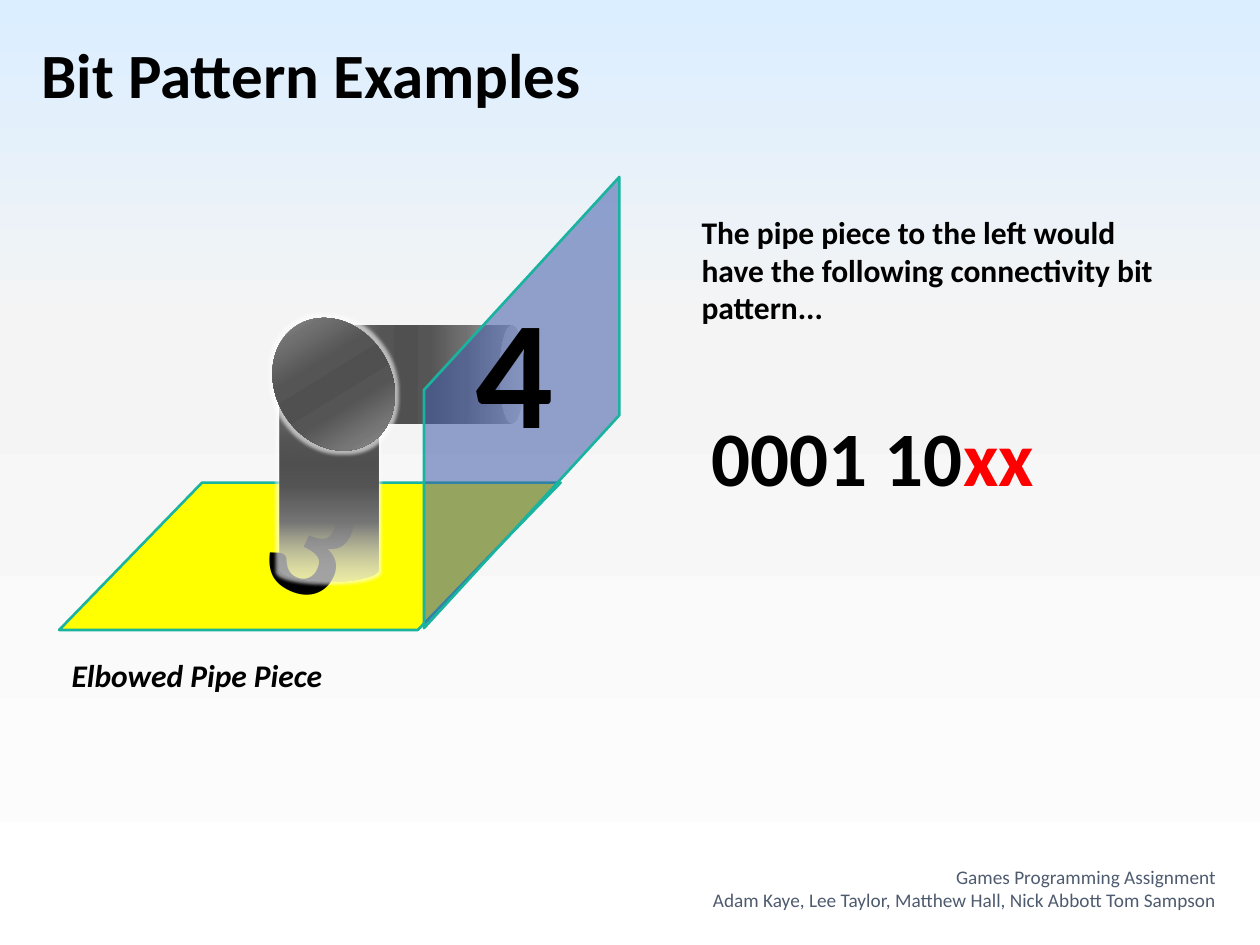
from lxml import etree
from pptx import Presentation
from pptx.dml.color import RGBColor
from pptx.enum.shapes import MSO_SHAPE
from pptx.enum.text import MSO_ANCHOR, MSO_AUTO_SIZE, PP_ALIGN
from pptx.oxml.ns import qn
from pptx.util import Pt

CAN, OVAL, SLANT = MSO_SHAPE.CAN, MSO_SHAPE.OVAL, MSO_SHAPE.PARALLELOGRAM
BOTTOM, RIGHT = MSO_ANCHOR.BOTTOM, PP_ALIGN.RIGHT
GROW = MSO_AUTO_SIZE.SHAPE_TO_FIT_TEXT
FONT = "Calibri"
COLORS = {"ink": "000000", "unused": "FF0000", "footer": "4E5B6F", "floor": "FFFF00",
          "wall": "435EAA", "edge": "1AB39F", "glow": "FFFFFF"}
SKY = [(0, "FFFFFF", 100), (65, "F4F4F4", 100), (100, "DBEEFF", 100)]
METAL = [(0, "C0C0C0", 100), (25, "707070", 100), (40, "555555", 100), (50, "505050", 100),
         (60, "555555", 100), (75, "767676", 100), (100, "C0C0C0", 100)]
FADING_METAL = METAL[:-1] + [(100, "C0C0C0", 28)]


def rgb(name):
    """Return the named colour."""
    return RGBColor.from_string(COLORS[name])


def add_color(parent, color, opacity):
    """Append a colour with an opacity in percent to an XML parent."""
    node = etree.SubElement(parent, qn("a:srgbClr"), val=color)
    if opacity < 100:
        etree.SubElement(node, qn("a:alpha"), val=str(opacity * 1000))


def fill_gradient(owner, fill, stops, angle):
    """Give the fill of a slide or shape a linear gradient, angle counter-clockwise."""
    fill.gradient()
    fill.gradient_angle = angle
    stop_list = next(owner.element.iter(qn("a:gsLst")))
    for stop in list(stop_list):
        stop_list.remove(stop)
    for position, color, opacity in stops:
        stop = etree.SubElement(stop_list, qn("a:gs"), pos=str(position * 1000))
        add_color(stop, color, opacity)


def add_text(slide, box, lines, size, color="ink", bold=True, italic=False):
    """Add a text box with one paragraph per line and return it."""
    label = slide.shapes.add_textbox(*map(Pt, box))
    frame = label.text_frame
    frame.word_wrap = True
    frame.auto_size = GROW
    frame.text = "\n".join(lines)
    for paragraph in frame.paragraphs:
        font = paragraph.font
        font.name, font.size, font.bold, font.italic = FONT, Pt(size), bold, italic
        font.color.rgb = rgb(color)
    return label


def add_plane(slide, box, slant, color, opacity=100):
    """Add an outlined parallelogram and return it."""
    plane = slide.shapes.add_shape(SLANT, *map(Pt, box))
    plane.shadow.inherit = False
    plane.adjustments[0] = slant
    plane.fill.solid()
    plane.fill.fore_color.rgb = rgb(color)
    if opacity < 100:
        tint = next(plane.element.spPr.iter(qn("a:srgbClr")))
        etree.SubElement(tint, qn("a:alpha"), val=str(opacity * 1000))
    plane.line.color.rgb = rgb("edge")
    plane.line.width = Pt(1.5)
    return plane


def add_pipe(slide, kind, box, rotation, stops, glow=0):
    """Add a metal pipe part with an optional glow radius."""
    pipe = slide.shapes.add_shape(kind, *map(Pt, box))
    pipe.shadow.inherit = False
    pipe.rotation = rotation
    fill_gradient(pipe, pipe.fill, stops, 270)
    pipe.line.fill.background()
    if glow:
        effects = pipe.element.spPr.find(qn("a:effectLst"))
        halo = etree.SubElement(effects, qn("a:glow"), rad=str(Pt(glow)))
        add_color(halo, COLORS["glow"], 60)


def add_elbow_diagram(slide, left, top):
    """Draw the elbowed pipe between its floor and wall planes with a caption."""
    def at(x, y, width, height):
        return left + x, top + y, width, height

    add_plane(slide, at(0, 175.8, 286.6, 84.2), 0.97, "floor")
    add_text(slide, at(116, 154.2, 84.2, 113.8), ["3"], 88).rotation = 24.9
    add_pipe(slide, CAN, at(126, 96.6, 56.2, 135.4), 0, FADING_METAL, 4)
    add_pipe(slide, CAN, at(170, 46.2, 56.2, 135.4), 90, METAL)
    add_pipe(slide, OVAL, at(123.8, 80, 66.2, 79.2), 328.3, METAL, 4)
    wall = add_plane(slide, at(135.4, 74.2, 257.8, 111.6), 1.09, "wall", 56)
    wall.rotation = 90
    wall.element.spPr.find(qn("a:xfrm")).set("flipV", "1")
    add_text(slide, at(231, 53.4, 82, 110.9), ["4"], 88)
    add_text(slide, at(0, 271.5, 242, 28.8), ["Elbowed Pipe Piece"], 18, italic=True)


def add_explanation(slide, left, top):
    """Add the sentence and the bit pattern with its unused bits in red."""
    sentence = "The pipe piece to the left would have the following connectivity bit pattern..."
    add_text(slide, (left, top, 281.5, 72.7), [sentence], 18)
    pattern = add_text(slide, (left + 5.8, top + 112.3, 264.2, 60.5), ["0001 10"], 44)
    unused_bits = pattern.text_frame.paragraphs[0].add_run()
    unused_bits.text = "xx"
    unused_bits.font.color.rgb = rgb("unused")


def add_footer(slide, box):
    """Add the right-aligned course and author lines."""
    lines = ["Games Programming Assignment",
             "Adam Kaye, Lee Taylor, Matthew Hall, Nick Abbott Tom Sampson"]
    frame = add_text(slide, box, lines, 11, "footer", bold=False).text_frame
    frame.auto_size = MSO_AUTO_SIZE.NONE
    frame.vertical_anchor = BOTTOM
    for paragraph in frame.paragraphs:
        paragraph.alignment = RIGHT


def main():
    """Build and save the slide."""
    deck = Presentation()
    deck.slide_width, deck.slide_height = Pt(720), Pt(540)
    slide = deck.slides.add_slide(deck.slide_layouts[6])
    fill_gradient(slide, slide.background.fill, SKY, 90)
    add_text(slide, (16.6, 16.6, 455.8, 51.1), ["Bit Pattern Examples"], 36)
    add_explanation(slide, 393.8, 118.1)
    add_elbow_diagram(slide, 33.8, 100)
    add_footer(slide, (264.2, 495.4, 437.8, 28.8))
    deck.save("out.pptx")


if __name__ == "__main__":
    main()
